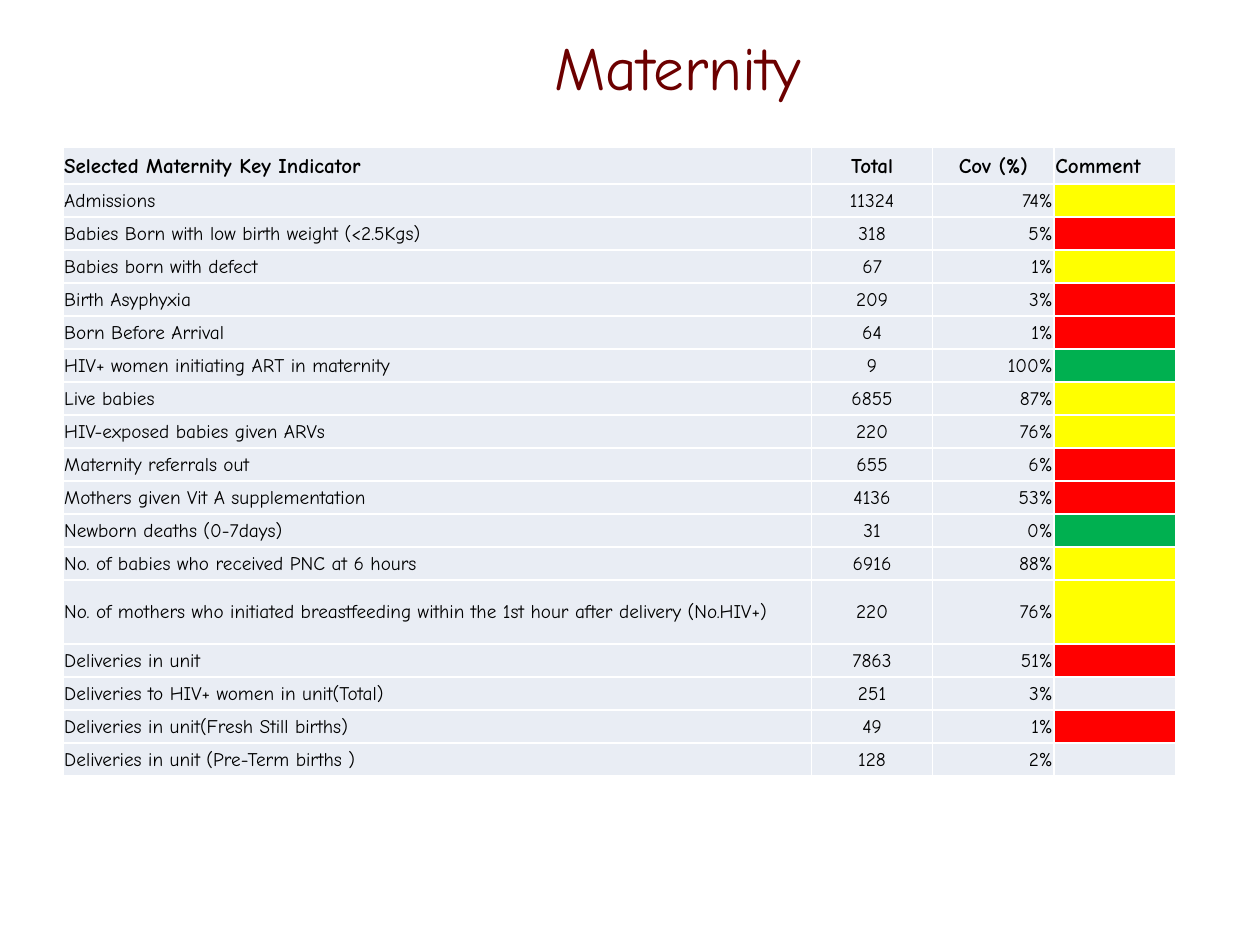
from dataclasses import dataclass

from lxml import etree
from pptx import Presentation
from pptx import util as u
from pptx.dml.color import RGBColor
from pptx.enum import text
from pptx.oxml import ns


@dataclass(frozen=True)
class Theme:
    font: str = "Comic Neue"
    title: str = "6C0000"
    ink: str = "000000"
    paper: str = "FFFFFF"
    cell: str = "E9EDF4"
    red: str = "FF0000"
    yellow: str = "FFFF00"
    green: str = "00B050"
    title_size: int = 35
    header_size: int = 12
    body_size: int = 11


THEME = Theme()
LEFT, CENTER, RIGHT = text.PP_ALIGN.LEFT, text.PP_ALIGN.CENTER, text.PP_ALIGN.RIGHT
HEADERS = ["Selected Maternity Key Indicator", "Total", "Cov (%)", "Comment"]
INDICATORS = [
    ("Admissions", "11324", "74%", THEME.yellow),
    ("Babies Born with low birth weight (<2.5Kgs)", "318", "5%", THEME.red),
    ("Babies born with defect", "67", "1%", THEME.yellow),
    ("Birth Asyphyxia", "209", "3%", THEME.red),
    ("Born Before Arrival", "64", "1%", THEME.red),
    ("HIV+ women initiating ART in maternity", "9", "100%", THEME.green),
    ("Live babies", "6855", "87%", THEME.yellow),
    ("HIV-exposed babies given ARVs", "220", "76%", THEME.yellow),
    ("Maternity referrals out", "655", "6%", THEME.red),
    ("Mothers given Vit A supplementation", "4136", "53%", THEME.red),
    ("Newborn deaths (0-7days)", "31", "0%", THEME.green),
    ("No. of babies who received PNC at 6 hours", "6916", "88%", THEME.yellow),
    ("No. of mothers who initiated breastfeeding within the 1st hour after delivery (No.HIV+)",
     "220", "76%", THEME.yellow),
    ("Deliveries in unit", "7863", "51%", THEME.red),
    ("Deliveries to HIV+ women in unit(Total)", "251", "3%", THEME.cell),
    ("Deliveries in unit(Fresh Still births)", "49", "1%", THEME.red),
    ("Deliveries in unit (Pre-Term births )", "128", "2%", THEME.cell),
]
TALL_ROW = 13


def write(frame, words, size=THEME.body_size, color=THEME.ink, bold=False, align=LEFT):
    para = frame.paragraphs[0]
    para.alignment = align
    if not words:
        etree.SubElement(para._p, ns.qn("a:endParaRPr"), sz=str(size * 100))
        return
    span = para.add_run()
    span.text = words
    span.font.name = THEME.font
    span.font.size = u.Pt(size)
    span.font.bold = bold
    span.font.color.rgb = RGBColor.from_string(color)


def style_cell(cell, fill):
    cell.vertical_anchor = text.MSO_ANCHOR.MIDDLE
    cell.margin_left = cell.margin_right = cell.margin_top = u.Inches(0.01)
    cell.margin_bottom = 0
    properties = cell._tc.get_or_add_tcPr()
    for side in ("lnL", "lnR", "lnT", "lnB"):
        line = etree.SubElement(properties, ns.qn(f"a:{side}"), w=str(u.Pt(1)))
        solid = etree.SubElement(line, ns.qn("a:solidFill"))
        etree.SubElement(solid, ns.qn("a:srgbClr"), val=THEME.paper)
    cell.fill.solid()
    cell.fill.fore_color.rgb = RGBColor.from_string(fill)


def add_title(page, left, top, width, height):
    box = page.shapes.add_textbox(left, top, width, height)
    frame = box.text_frame
    frame.word_wrap = True
    frame.vertical_anchor = text.MSO_ANCHOR.MIDDLE
    write(frame, "Maternity", size=THEME.title_size, color=THEME.title, align=CENTER)


def add_indicator_table(page, left, top, width, height):
    row_count = len(INDICATORS) + 1
    table = page.shapes.add_table(row_count, len(HEADERS), left, top, width, height).table

    first_width = u.Inches(5.94)
    table.columns[0].width = first_width
    for column in list(table.columns)[1:]:
        column.width = (width - first_width) // 3

    special_heights = {0: u.Inches(0.29), TALL_ROW: u.Inches(0.51)}
    plain_height = (height - sum(special_heights.values())) // (row_count - len(special_heights))
    for index, row in enumerate(table.rows):
        row.height = special_heights.get(index, plain_height)

    for cell, words, align in zip(table.rows[0].cells, HEADERS, (LEFT, CENTER, CENTER, LEFT)):
        style_cell(cell, THEME.cell)
        write(cell.text_frame, words, size=THEME.header_size, bold=True, align=align)

    for index, (name, total, coverage, rating) in enumerate(INDICATORS, start=1):
        fills = (THEME.cell, THEME.cell, THEME.cell, rating)
        aligns = (LEFT, CENTER, RIGHT, LEFT)
        values = (name, total, coverage, "")
        for cell, words, align, fill in zip(table.rows[index].cells, values, aligns, fills):
            style_cell(cell, fill)
            write(cell.text_frame, words, align=align)


def main():
    deck = Presentation()
    deck.slide_width, deck.slide_height = u.Inches(10), u.Inches(7.5)
    page = deck.slides.add_slide(deck.slide_layouts[6])
    page.background.fill.solid()
    page.background.fill.fore_color.rgb = RGBColor.from_string(THEME.paper)
    add_title(page, u.Inches(1.17), u.Inches(0.13), u.Inches(8.42), u.Inches(0.78))
    add_indicator_table(page, u.Inches(0.5), u.Inches(1.17), u.Inches(8.83), u.Inches(4.99))
    deck.save("out.pptx")


if __name__ == "__main__":
    main()
